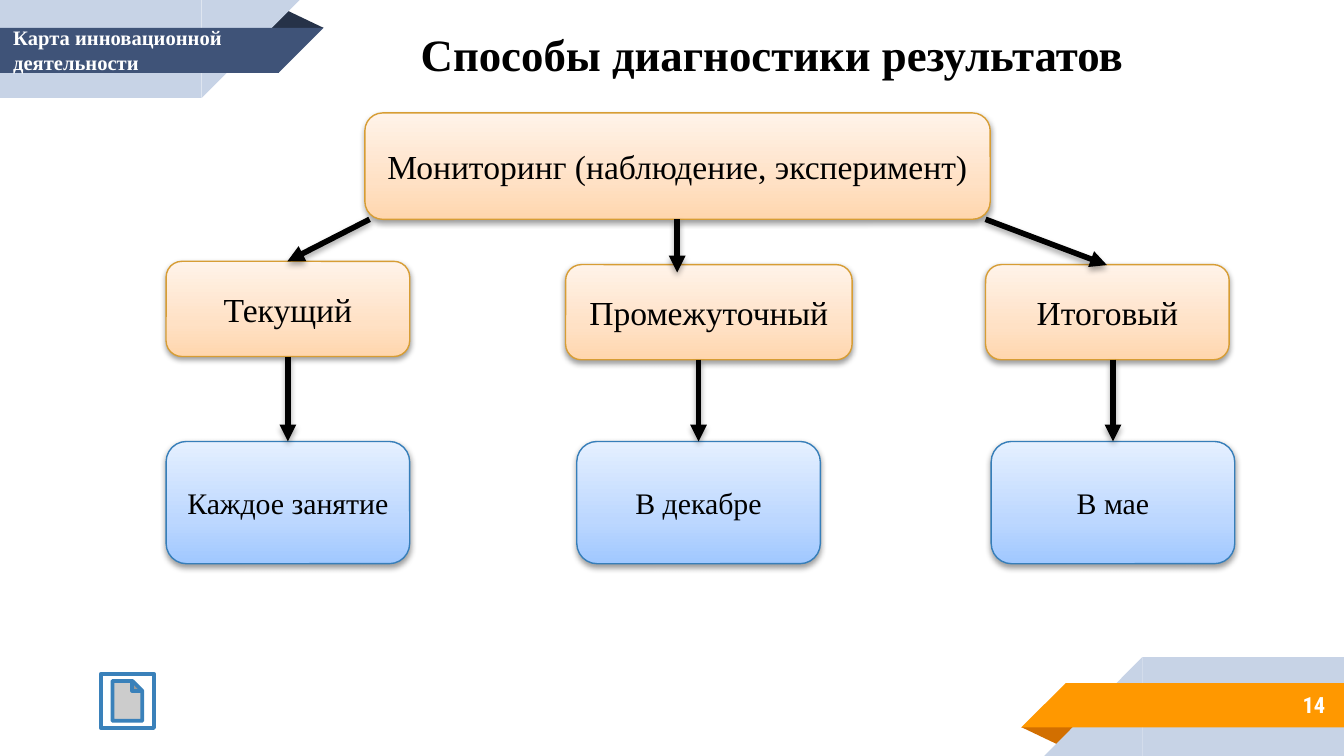
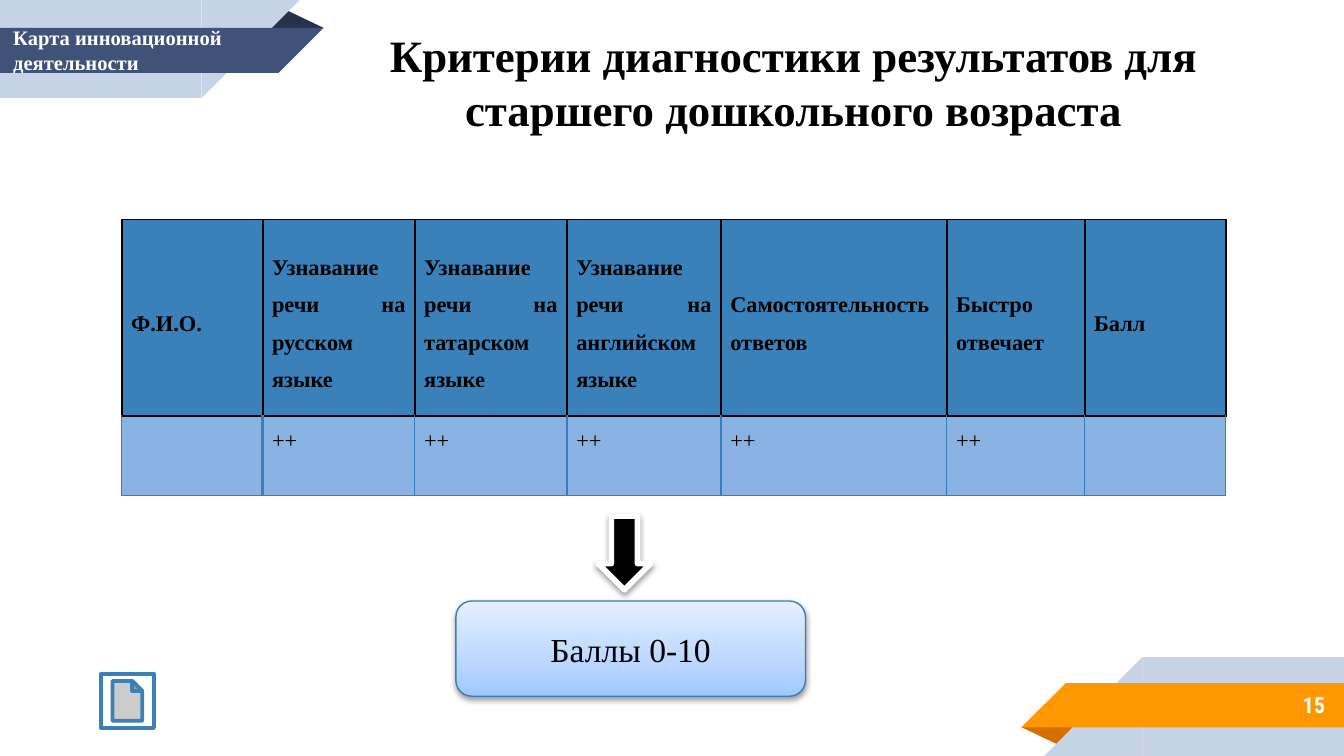
import pptx
import pptx.dml.color
import pptx.enum.shapes
import pptx.enum.text
import pptx.oxml
import pptx.oxml.ns
import pptx.util

Pt = pptx.util.Pt
KIND = pptx.enum.shapes.MSO_SHAPE
ALIGN = pptx.enum.text.PP_ALIGN
ANCHOR = pptx.enum.text.MSO_ANCHOR
GROW = pptx.enum.text.MSO_AUTO_SIZE.SHAPE_TO_FIT_TEXT
NS = pptx.oxml.ns.nsdecls("a")
SERIF = "Times New Roman"

HUES = {
    "black": "000000", "white": "FFFFFF", "pale": "C7D3E6",
    "gold": "FF9800", "rust": "D26F00", "navy": "3F5378", "night": "263248",
    "head": "3A81BA", "cell": "89B3E3", "blue": "367EB9", "peach": "D79D34",
}
FADES = {
    "blue": ((0, "A0C8FF"), (35, "BCD7FF"), (100, "E5F0FF")),
    "peach": ((0, "FFD6AD"), (35, "FFE1C5"), (100, "FFF3E9")),
}
TITLE = {"size": Pt(24), "bold": True, "name": SERIF}
LABEL = {"size": Pt(11), "bold": True, "name": SERIF}
PAGE = {"size": Pt(12), "bold": True, "name": "Roboto Condensed"}
LARGE = {"size": Pt(18), "bold": False, "name": SERIF}
SMALL = {"size": Pt(16), "bold": False, "name": SERIF}
HEAD = {"size": Pt(12), "bold": True, "name": SERIF}
BODY = {"size": Pt(12), "bold": False, "name": SERIF}
ROW = {"alignment": ALIGN.JUSTIFY, "line_spacing": 1.5, "space_after": Pt(10)}
EDGE = {"margin_left": Pt(5), "margin_right": Pt(5),
        "margin_top": 0, "margin_bottom": 0}


def fit(item, form):
    for key, val in form.items():
        setattr(item, key, val)


def paint(fill, hue):
    fill.solid()
    fill.fore_color.rgb = pptx.dml.color.RGBColor.from_string(HUES[hue])


def node(text):
    return pptx.oxml.parse_xml(text)


def stroke(line, hue, width):
    paint(line.fill, hue)
    line.width = Pt(width)


def shade(item, dist=20000, alpha=38):
    spot = item._element.spPr
    for old in spot.findall(pptx.oxml.ns.qn("a:effectLst")):
        spot.remove(old)
    spot.append(node(
        f'<a:effectLst {NS}><a:outerShdw blurRad="40000" dist="{dist}" '
        f'dir="5400000" rotWithShape="0"><a:srgbClr val="{HUES["black"]}">'
        f'<a:alpha val="{alpha * 1000}"/></a:srgbClr></a:outerShdw></a:effectLst>'))


def write(frame, lines, font, hue="black", form=None):
    for num, line in enumerate(lines):
        para = frame.paragraphs[0] if num == 0 else frame.add_paragraph()
        fit(para, form or {})
        run = para.add_run()
        run.text = line
        fit(run.font, font)
        paint(run.font.fill, hue)


def label(slide, box, lines, font, hue, align, form):
    frame = slide.shapes.add_textbox(*map(Pt, box)).text_frame
    fit(frame, {"word_wrap": True, **form})
    write(frame, lines, font, hue, {"alignment": align})


def block(shapes, kind, box, hue, flip=False, turn=0):
    item = shapes.add_shape(kind, *map(Pt, box))
    item.shadow.inherit = False
    paint(item.fill, hue)
    item.line.fill.background()
    item.rotation = turn
    if flip:
        item._element.spPr.xfrm.set("flipH", "1")
    if kind == KIND.ISOSCELES_TRIANGLE:
        item.adjustments[0] = 0.324
    return item


def card(slide, box, text, tone, font):
    item = slide.shapes.add_shape(KIND.ROUNDED_RECTANGLE, *map(Pt, box))
    stops = "".join(f'<a:gs pos="{pos * 1000}"><a:srgbClr val="{hue}"/></a:gs>'
                    for pos, hue in FADES[tone])
    item._element.spPr.insert(2, node(
        f'<a:gradFill {NS} rotWithShape="1"><a:gsLst>{stops}</a:gsLst>'
        '<a:lin ang="16200000" scaled="0"/></a:gradFill>'))
    stroke(item.line, tone, 0.75)
    shade(item)
    fit(item.text_frame, {"word_wrap": True, "vertical_anchor": ANCHOR.MIDDLE})
    write(item.text_frame, [text], font, form={"alignment": ALIGN.CENTER})


def arrow(slide, ends):
    item = slide.shapes.add_connector(
        pptx.enum.shapes.MSO_CONNECTOR.STRAIGHT, *map(Pt, ends))
    stroke(item.line, "black", 3)
    item.line._ln.append(node(f'<a:tailEnd {NS} type="triangle"/>'))
    shade(item, 23000, 35)


def ribbon(slide, parts):
    group = slide.shapes.add_group_shape().shapes
    for part in parts:
        block(group, *part)


def base(deck, page, title, box):
    slide = deck.slides.add_slide(deck.slide_layouts[6])
    wedge, tri, rect = KIND.RIGHT_TRIANGLE, KIND.ISOSCELES_TRIANGLE, KIND.RECTANGLE
    ribbon(slide, (
        (tri, (547, 389.5, 31, 10), "rust", False, 180),
        (rect, (612, 352, 108, 53), "pale"),
        (wedge, (559.5, 352, 52.5, 53), "pale", True),
        (rect, (571, 366, 149, 23.75), "gold"),
        (wedge, (547, 366, 24, 23.75), "gold", True)))
    ribbon(slide, (
        (tri, (142.5, 5, 31, 10), "night"),
        (rect, (0, 0, 108, 52.5), "pale"),
        (wedge, (108, 0, 52.5, 52.5), "pale", True, 180),
        (rect, (0, 15, 149.5, 24), "navy"),
        (wedge, (149.25, 15, 24, 24), "navy", True, 180)))
    side = dict.fromkeys(
        ("margin_left", "margin_right", "margin_top", "margin_bottom"), Pt(7.2))
    label(slide, (600, 365, 117, 25), [str(page)], PAGE, "white", ALIGN.RIGHT,
          {**side, "vertical_anchor": ANCHOR.MIDDLE})
    label(slide, box, [title], TITLE, "black", ALIGN.CENTER, {"auto_size": GROW})
    icon = block(slide.shapes, KIND.ACTION_BUTTON_DOCUMENT,
                 (54, 361, 28.5, 29), "white")
    stroke(icon.line, "head", 2)
    label(slide, (0, 10, 236, 34), ["Карта инновационной", "деятельности"],
          LABEL, "white", ALIGN.LEFT, {"auto_size": GROW})
    return slide


def border(cell, sides):
    prop = cell._tc.get_or_add_tcPr()
    for num, (tag, hue, width) in enumerate(sides):
        prop.insert(num, node(
            f'<a:{tag} {NS} w="{Pt(width)}"><a:solidFill>'
            f'<a:srgbClr val="{HUES[hue]}"/></a:solidFill></a:{tag}>'))


def grid(slide, left, top, cols, rows, data):
    spot = (left, top, sum(cols), sum(rows))
    table = slide.shapes.add_table(
        len(rows), len(cols), *map(Pt, spot)).table
    fit(table, {"first_row": False, "horz_banding": False})
    for col, width in zip(table.columns, cols):
        col.width = Pt(width)
    for y, (high, texts) in enumerate(zip(rows, data)):
        table.rows[y].height = Pt(high)
        for x, text in enumerate(texts):
            cell = table.cell(y, x)
            fit(cell, EDGE)
            paint(cell.fill, "cell" if y else "head")
            if y:
                first, last = x == 0, x == 1
                border(cell, (
                    ("lnL", "head" if last else "blue", 2 if last else 0.75),
                    ("lnR", "head" if first else "blue", 2 if first else 0.75),
                    ("lnT", "black", 1), ("lnB", "blue", 0.75)))
            else:
                cell.vertical_anchor = ANCHOR.MIDDLE
                border(cell, [(tag, "black", 1)
                              for tag in ("lnL", "lnR", "lnT", "lnB")])
            if text:
                write(cell.text_frame, [text], BODY if y else HEAD, form=ROW)


def ways(deck):
    slide = base(deck, 14, "Способы диагностики результатов",
                 (161.5, 11, 504, 36))
    card(slide, (195.5, 60.5, 335, 57), "Мониторинг (наблюдение, эксперимент)",
         "peach", LARGE)
    stages = (
        ("Текущий", (89, 140, 130.5, 51), "Каждое занятие", 89, 197.5, 154),
        ("Промежуточный", (303, 141.75, 153.5, 51), "В декабре", 309, 363, 362.5),
        ("Итоговый", (528, 141.75, 130.5, 51), "В мае", 531, 528, 593))
    for name, box, when, left, start, end in stages:
        card(slide, box, name, "peach", LARGE)
        card(slide, (left, 236.5, 130.5, 65.5), when, "blue", SMALL)
        mid = left + 65.25
        arrow(slide, (mid, box[1] + box[3], mid, 236.5))
    for ends in ((198, 117.5, 154, 140), (362.75, 117.5, 362.75, 146),
                 (528, 117.5, 593, 142)):
        arrow(slide, ends)


def marks(deck):
    slide = base(
        deck, 15,
        "Критерии диагностики результатов для старшего дошкольного возраста",
        (173, 11.5, 504, 65.5))
    heads = ["Ф.И.О."]
    heads += [f"Узнавание речи на {tongue} языке"
              for tongue in ("русском", "татарском", "английском")]
    heads += ["Самостоятельность ответов", "Быстро отвечает", "Балл"]
    grid(slide, 65.25, 117.5, (75.5, 81.5, 81.5, 82.5, 121, 74, 75.5),
         (105.5, 42.5), (heads, ["", *["++"] * 5, ""]))
    down = block(slide.shapes, KIND.DOWN_ARROW, (320.5, 276.5, 28, 39.5), "black")
    stroke(down.line, "white", 3)
    shade(down)
    card(slide, (244.25, 322, 187.25, 51), "Баллы 0-10", "blue", LARGE)


def main():
    deck = pptx.Presentation()
    fit(deck, {"slide_width": Pt(720), "slide_height": Pt(405)})
    ways(deck)
    marks(deck)
    deck.save("out.pptx")


if __name__ == "__main__":
    main()
